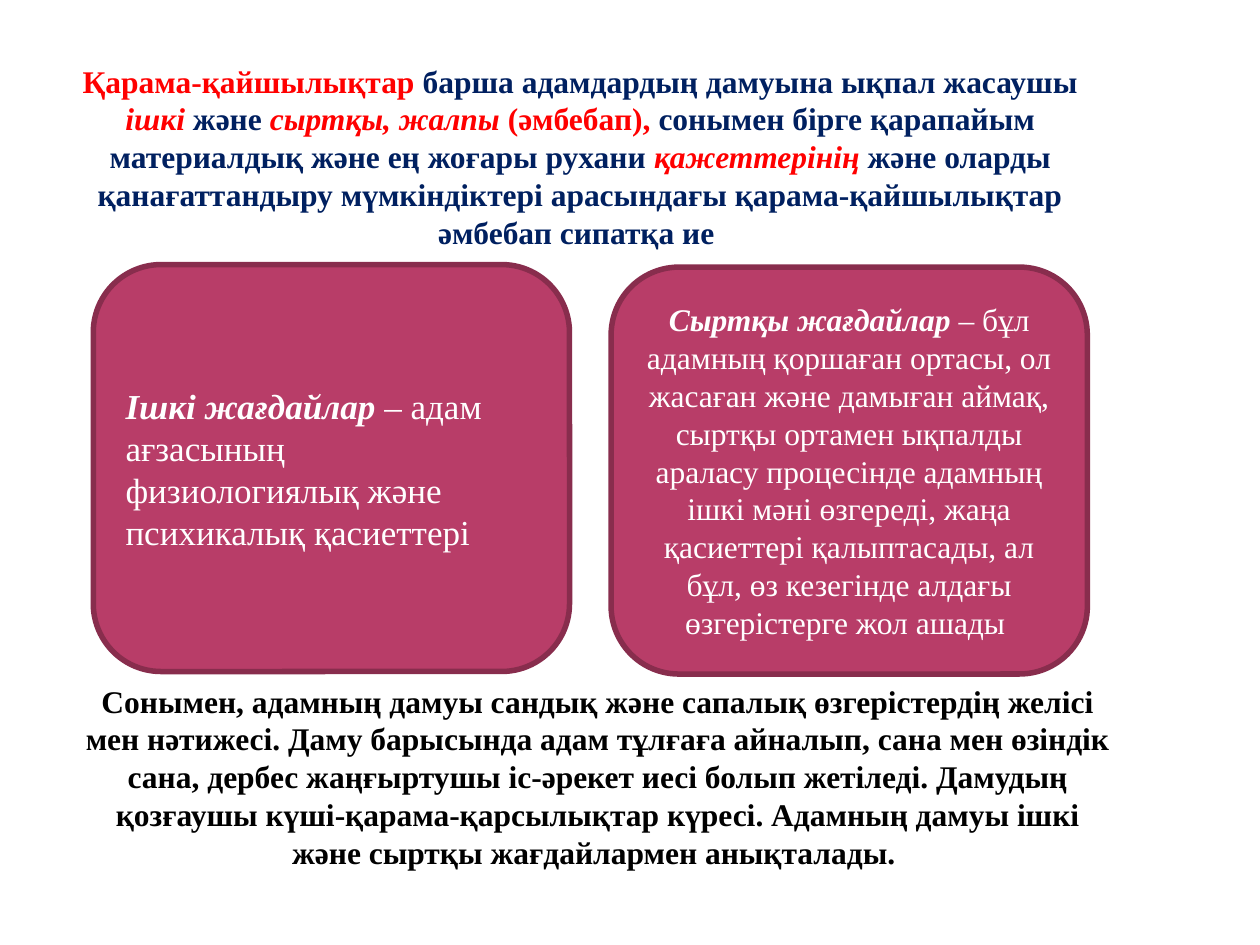
"""Build a slide on contradictions and the inner and outer conditions of human development."""
from dataclasses import dataclass

from pptx import Presentation
from pptx.dml.color import RGBColor
from pptx.enum.shapes import MSO_SHAPE
from pptx.enum.text import MSO_ANCHOR, PP_ALIGN
from pptx.util import Inches, Pt

ROUNDED = MSO_SHAPE.ROUNDED_RECTANGLE
MIDDLE, TOP = MSO_ANCHOR.MIDDLE, MSO_ANCHOR.TOP
LEFT, CENTER = PP_ALIGN.LEFT, PP_ALIGN.CENTER


@dataclass(frozen=True)
class Theme:
    """Colours, font and sizes of the slide."""
    font: str = "Times New Roman"
    red: str = "FF0000"
    navy: str = "002060"
    black: str = "000000"
    white: str = "FFFFFF"
    card: str = "B83D68"
    border: str = "882D4D"
    border_width: float = 3.15
    body: int = 18
    large: int = 20


THEME = Theme()
SLIDE_WIDTH, SLIDE_HEIGHT = 10, 7.5
TEXT_SIZE = (8.35, 1.62)
CARD_SIZE = (3.78, 3.23)
CARD_LEFT, CARD_TOP = 0.74, 2.1
CARD_GAP, CARD_DROP = 0.33, 0.02

INTRO = [[
    ("Қарама-қайшылықтар ", THEME.red, "b"),
    ("барша адамдардың дамуына ықпал жасаушы ", THEME.navy, "b"),
    ("ішкі ", THEME.red, "bi"),
    ("жəне ", THEME.navy, "b"),
    ("сыртқы, жалпы ", THEME.red, "bi"),
    ("(əмбебап), ", THEME.red, "b"),
    ("сонымен бірге қарапайым материалдық жəне ең жоғары рухани ", THEME.navy, "b"),
    ("қажеттерінің ", THEME.red, "bi"),
    ("жəне оларды қанағаттандыру мүмкіндіктері арасындағы "
     "қарама-қайшылықтар əмбебап сипатқа ие ", THEME.navy, "b"),
]]
INNER = [
    [("Ішкі жағдайлар ", THEME.white, "bi"), ("– адам ағзасының", THEME.white, "")],
    [("физиологиялық жəне психикалық қасиеттері", THEME.white, "")],
]
OUTER = [[
    ("Сыртқы жағдайлар ", THEME.white, "bi"),
    ("– бұл адамның қоршаған ортасы, ол жасаған жəне дамыған аймақ, сыртқы "
     "ортамен ықпалды араласу процесінде адамның ішкі мəні өзгереді, жаңа "
     "қасиеттері қалыптасады, ал бұл, өз кезегінде алдағы өзгерістерге жол "
     "ашады ", THEME.white, ""),
]]
SUMMARY = [[
    ("Сонымен, адамның дамуы сандық жəне сапалық өзгерістердің желісі мен "
     "нəтижесі. Даму барысында адам тұлғаға айналып, сана мен өзіндік сана, "
     "дербес жаңғыртушы іс-əрекет иесі болып жетіледі. Дамудың қозғаушы "
     "күші-қарама-қарсылықтар күресі. Адамның дамуы ішкі жəне сыртқы "
     "жағдайлармен анықталады. ", THEME.black, "b"),
]]
TEXTS = [(0.43, 0.44, INTRO), (0.57, 5.36, SUMMARY)]
CARDS = [(INNER, THEME.large, LEFT), (OUTER, THEME.body, CENTER)]


def write(box, paragraphs, size, align, anchor):
    """Fill a box with styled runs."""
    frame = box.text_frame
    frame.word_wrap = True
    frame.vertical_anchor = anchor
    for index, spans in enumerate(paragraphs):
        para = frame.add_paragraph() if index else frame.paragraphs[0]
        para.alignment = align
        for text, color, style in spans:
            span = para.add_run()
            span.text = text
            span.font.name = THEME.font
            span.font.size = Pt(size)
            span.font.bold = "b" in style
            span.font.italic = "i" in style
            span.font.color.rgb = RGBColor.from_string(color)


def add_text(page, left, top, paragraphs):
    """Place a centred text block."""
    box = page.shapes.add_textbox(*map(Inches, (left, top, *TEXT_SIZE)))
    write(box, paragraphs, THEME.body, CENTER, TOP)


def add_card(page, column, paragraphs, size, align):
    """Place a rounded card in its column."""
    left = CARD_LEFT + column * (CARD_SIZE[0] + CARD_GAP)
    top = CARD_TOP + column * CARD_DROP
    card = page.shapes.add_shape(ROUNDED, *map(Inches, (left, top, *CARD_SIZE)))
    card.shadow.inherit = False
    card.fill.solid()
    card.fill.fore_color.rgb = RGBColor.from_string(THEME.card)
    card.line.color.rgb = RGBColor.from_string(THEME.border)
    card.line.width = Pt(THEME.border_width)
    write(card, paragraphs, size, align, MIDDLE)


def main():
    """Build and save the deck."""
    deck = Presentation()
    deck.slide_width, deck.slide_height = Inches(SLIDE_WIDTH), Inches(SLIDE_HEIGHT)
    page = deck.slides.add_slide(deck.slide_layouts.get_by_name("Blank"))
    for left, top, paragraphs in TEXTS:
        add_text(page, left, top, paragraphs)
    for column, (paragraphs, size, align) in enumerate(CARDS):
        add_card(page, column, paragraphs, size, align)
    deck.save("out.pptx")


if __name__ == "__main__":
    main()
